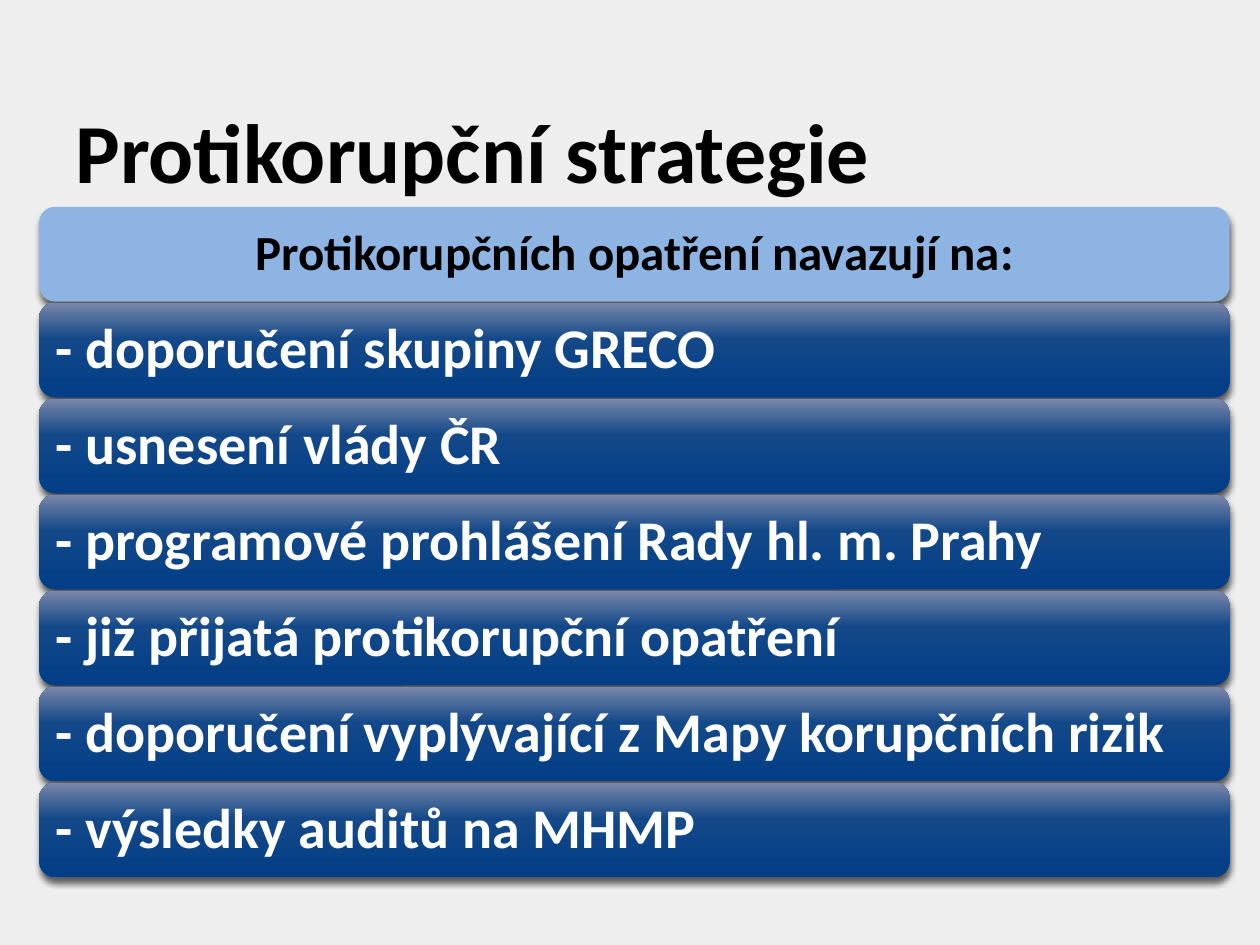
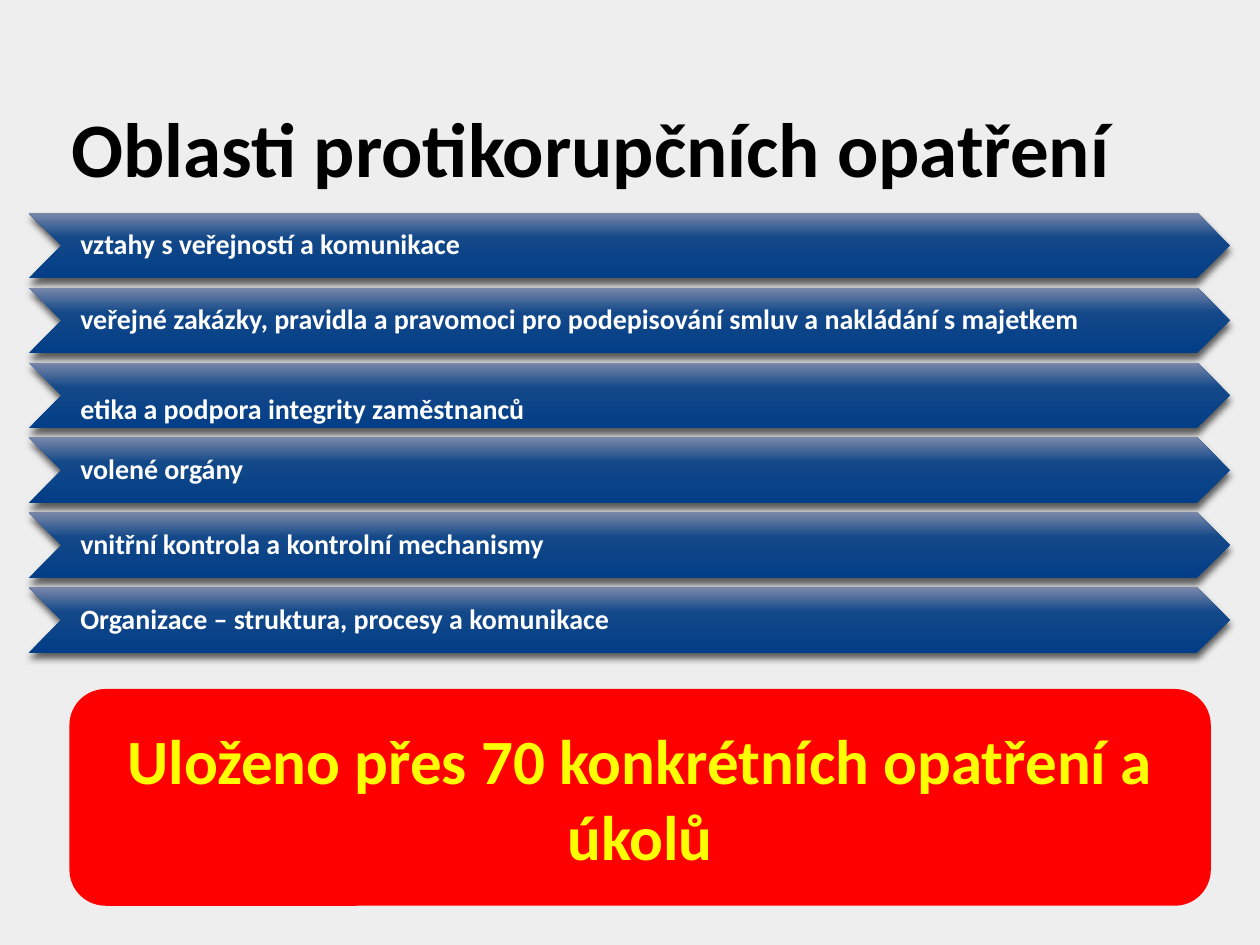
"""Builds two slides on the anti-corruption strategy."""
from lxml import etree
from pptx import Presentation
from pptx.dml.color import RGBColor
from pptx.enum.shapes import MSO_SHAPE as Preset
from pptx.enum.text import MSO_ANCHOR as Anchor, MSO_AUTO_SIZE as AutoSize, PP_ALIGN as Align
from pptx.oxml.ns import qn
from pptx.util import Cm, Pt

BACKGROUND = RGBColor(0xEE, 0xEE, 0xEE)
BLACK = RGBColor(0, 0, 0)
WHITE = RGBColor(0xFF, 0xFF, 0xFF)
LIGHT_BLUE = RGBColor(0x8E, 0xB4, 0xE3)
RED = RGBColor(0xFF, 0, 0)
YELLOW = RGBColor(0xFF, 0xFF, 0)
BAR_GRADIENT = (
    (0, RGBColor(0x02, 0x3E, 0x87)),
    (62, RGBColor(0x13, 0x48, 0x89)),
    (100, RGBColor(0x7A, 0x88, 0xA9)),
)
FONT = "Calibri"

SOURCES = (
    "- doporučení skupiny GRECO",
    "- usnesení vlády ČR",
    "- programové prohlášení Rady hl. m. Prahy",
    "- již přijatá protikorupční opatření",
    "- doporučení vyplývající z Mapy korupčních rizik",
    "- výsledky auditů na MHMP",
)
AREAS = (
    "vztahy s veřejností a komunikace",
    "veřejné zakázky, pravidla a pravomoci pro podepisování smluv a nakládání s majetkem",
    "etika a podpora integrity zaměstnanců",
    "volené orgány",
    "vnitřní kontrola a kontrolní mechanismy",
    "Organizace – struktura, procesy a komunikace",
)


def write_text(shape, text, *, size, color, align=Align.LEFT, anchor=Anchor.MIDDLE,
               insets=(0.25, 0.13, 0.25, 0.13), line_spacing=None):
    frame = shape.text_frame
    frame.word_wrap = True
    frame.auto_size = AutoSize.NONE
    frame.vertical_anchor = anchor
    (frame.margin_left, frame.margin_top,
     frame.margin_right, frame.margin_bottom) = map(Cm, insets)
    paragraph = frame.paragraphs[0]
    paragraph.alignment = align
    paragraph.line_spacing = line_spacing
    run = paragraph.add_run()
    run.text = text
    run.font.name = FONT
    run.font.size = Pt(size)
    run.font.bold = True
    run.font.color.rgb = color


def apply_gradient(shape):
    shape.fill.background()
    properties = shape.element.spPr
    gradient = etree.Element(qn("a:gradFill"), rotWithShape="1")
    stops = etree.SubElement(gradient, qn("a:gsLst"))
    for position, color in BAR_GRADIENT:
        stop = etree.SubElement(stops, qn("a:gs"), pos=str(position * 1000))
        etree.SubElement(stop, qn("a:srgbClr"), val=str(color))
    etree.SubElement(gradient, qn("a:lin"), ang="16200000", scaled="0")
    properties.replace(properties.find(qn("a:noFill")), gradient)


def apply_shadow(shape):
    effects = shape.element.spPr.find(qn("a:effectLst"))
    shadow = etree.SubElement(effects, qn("a:outerShdw"), blurRad=str(Pt(4)),
                              dist=str(Pt(3)), dir="5400000", rotWithShape="0")
    color = etree.SubElement(shadow, qn("a:srgbClr"), val=str(BLACK))
    etree.SubElement(color, qn("a:alpha"), val="61000")


class Deck:
    def __init__(self):
        self.presentation = Presentation()
        self.presentation.slide_width = Cm(25.4)
        self.presentation.slide_height = Cm(19.05)
        self.slide = None

    def add_slide(self, title, box, size):
        layout = self.presentation.slide_layouts[5]
        self.slide = self.presentation.slides.add_slide(layout)
        fill = self.slide.background.fill
        fill.solid()
        fill.fore_color.rgb = BACKGROUND
        shape = self.slide.shapes.title
        shape.left, shape.top, shape.width, shape.height = map(Cm, box)
        write_text(shape, title, size=size, color=BLACK, anchor=Anchor.BOTTOM)

    def add_panel(self, preset, box, text, *, fill=None, shadow=True, **text_format):
        shape = self.slide.shapes.add_shape(preset, *map(Cm, box))
        if fill is None:
            apply_gradient(shape)
        else:
            shape.fill.solid()
            shape.fill.fore_color.rgb = fill
        shape.line.fill.background()
        shape.shadow.inherit = False
        if shadow:
            apply_shadow(shape)
        write_text(shape, text, **text_format)


def add_strategy_slide(deck):
    deck.add_slide("Protikorupční strategie", (1.27, 0.99, 22.86, 3.18), 48)
    left, top, width, height = 0.79, 4.17, 24, 1.91
    pitch = 11.61 / len(SOURCES)
    bar_format = dict(insets=(0.24, 0.24, 0.24, 0.24), line_spacing=0.9)
    deck.add_panel(Preset.ROUNDED_RECTANGLE, (left, top, width, height),
                   "Protikorupčních opatření navazují na:", fill=LIGHT_BLUE,
                   size=28, color=BLACK, align=Align.CENTER, **bar_format)
    for row, source in enumerate(SOURCES, start=1):
        deck.add_panel(Preset.ROUNDED_RECTANGLE, (left, top + row * pitch, width, height),
                       source, size=32, color=WHITE, **bar_format)


def add_areas_slide(deck):
    deck.add_slide("Oblasti protikorupčních opatření", (1.19, 1.4, 22.94, 2.62), 44)
    pitch = 7.55 / (len(AREAS) - 1)
    lowered_row = 2
    for row, area in enumerate(AREAS):
        top_inset = 0.65 if row == lowered_row else 0.03
        deck.add_panel(Preset.CHEVRON, (0.58, 4.29 + row * pitch, 24.21, 1.32), area,
                       size=16, color=WHITE, insets=(0.38, top_inset, 0, 0.03),
                       line_spacing=0.9)
    deck.add_panel(Preset.ROUNDED_RECTANGLE, (1.4, 13.89, 23.01, 4.37),
                   "Uloženo přes 70 konkrétních opatření a úkolů", fill=RED, shadow=False,
                   size=36, color=YELLOW, align=Align.CENTER, insets=(0.2, 0.1, 0.2, 0.1))


def main():
    deck = Deck()
    add_strategy_slide(deck)
    add_areas_slide(deck)
    deck.presentation.save("out.pptx")


if __name__ == "__main__":
    main()
